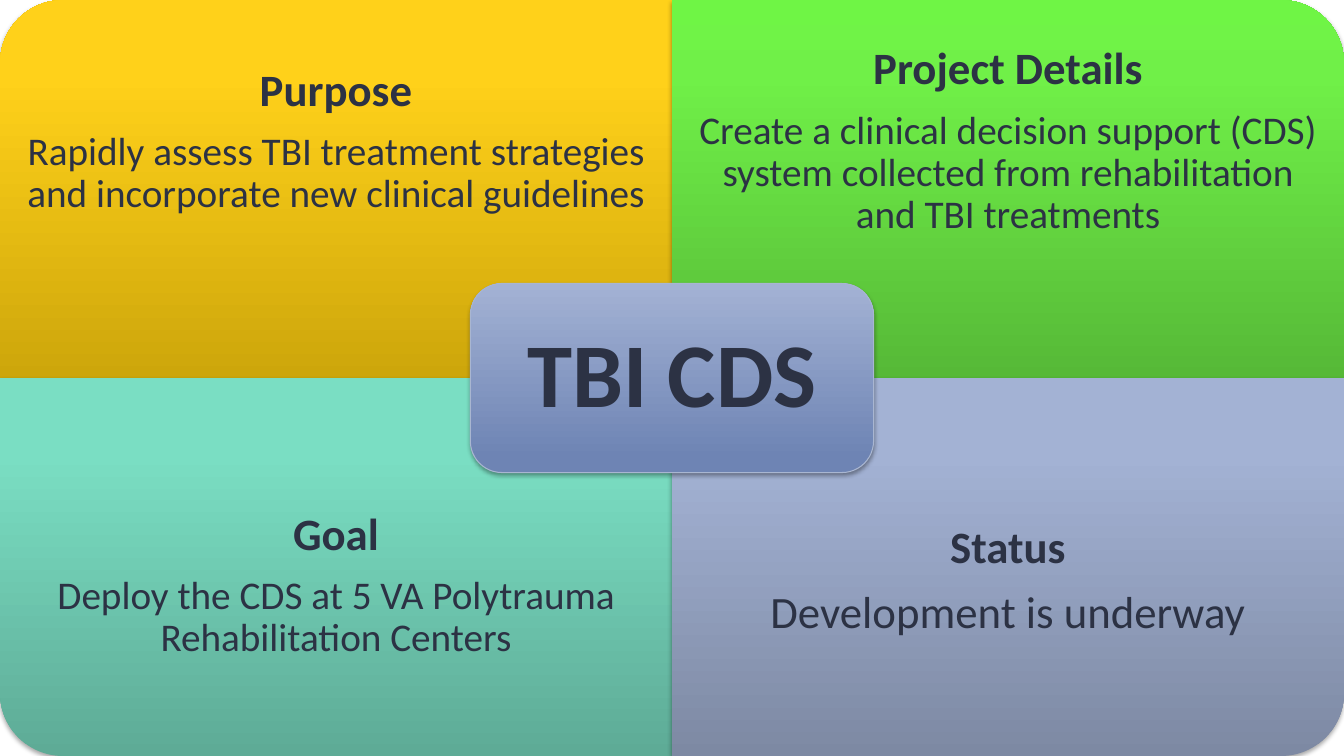
from dataclasses import dataclass

from lxml.etree import SubElement
from pptx import Presentation
from pptx.dml.color import RGBColor
from pptx.enum.shapes import MSO_SHAPE as Preset
from pptx.enum.text import MSO_ANCHOR as Anchor, PP_ALIGN as Align
from pptx.oxml import parse_xml
from pptx.oxml.ns import nsdecls, qn
from pptx.shapes.autoshape import Shape
from pptx.slide import Slide
from pptx.text.text import TextFrame
from pptx.util import Inches, Pt

Stops = tuple[tuple[int, str], ...]
WIDTH, HEIGHT = Inches(13.333), Inches(7.5)


@dataclass(frozen=True)
class Theme:
    font: str = "Calibri"
    ink: RGBColor = RGBColor.from_string("2C3244")
    hub_edge: RGBColor = RGBColor.from_string("A9B6D1")
    hub_fill: Stops = ((8, "6E84B4"), (100, "A3B2D4"))
    hub_size: int = 65
    heading_size: int = 32
    body_size: int = 28
    quadrant_inset: float = 0.25
    hub_inset: float = 0.27


THEME = Theme()


@dataclass(frozen=True)
class Area:
    """A rectangle in shares of the slide's width and height."""
    left: float
    top: float
    width: float
    height: float

    def box(self) -> tuple[int, int, int, int]:
        return (int(self.left * WIDTH), int(self.top * HEIGHT),
                int(self.width * WIDTH), int(self.height * HEIGHT))


@dataclass(frozen=True)
class Quadrant:
    column: int
    row: int
    rotation: int
    colours: tuple[str, str, str]
    heading: str
    body: str
    body_size: int = THEME.body_size
    lift: float = 0  # extra bottom inset, in inches


QUADRANTS = (
    Quadrant(0, 0, 270, ("CDA60B", "FFD11A", "FFD11B"), "Purpose",
             "Rapidly assess TBI treatment strategies and incorporate new clinical guidelines"),
    Quadrant(1, 0, 0, ("56B937", "70F048", "6FF545"), "Project Details",
             "Create a clinical decision support (CDS) system collected from "
             "rehabilitation and TBI treatments"),
    Quadrant(0, 1, 180, ("5EAB96", "7ADEC3", "78E1C5"), "Goal",
             "Deploy the CDS at 5 VA Polytrauma Rehabilitation Centers", lift=0.56),
    Quadrant(1, 1, 90, ("7D89A3", "A3B2D4", "A3B3D6"), "Status",
             "Development is underway", THEME.heading_size, lift=0.65),
)
HUB = Area(0.35, 3 / 8, 0.3, 2 / 8)


def style_surface(shape: Shape, stops: Stops) -> None:
    """Give a bottom-to-top gradient that ignores rotation, and a soft shadow."""
    colours = "".join(
        f'<a:gs pos="{share * 1000}"><a:srgbClr val="{colour}"/></a:gs>'
        for share, colour in stops)
    properties = shape._element.spPr
    properties.find(qn("a:ln")).addprevious(parse_xml(
        f'<a:gradFill {nsdecls("a")} rotWithShape="0"><a:gsLst>{colours}</a:gsLst>'
        '<a:lin ang="16200000" scaled="0"/></a:gradFill>'))
    properties.append(parse_xml(
        f'<a:effectLst {nsdecls("a")}><a:outerShdw blurRad="{Pt(3.1)}" dist="{Pt(1.8)}" '
        'dir="5400000" rotWithShape="0"><a:srgbClr val="000000"><a:alpha val="35000"/>'
        '</a:srgbClr></a:outerShdw></a:effectLst>'))


def write(frame: TextFrame, lines: list[tuple[str, int, bool]],
          inset: float, lift: float = 0) -> None:
    """Write centred (text, size, bold) paragraphs."""
    frame.word_wrap = True
    frame.vertical_anchor = Anchor.MIDDLE
    frame.margin_left = frame.margin_right = frame.margin_top = Inches(inset)
    frame.margin_bottom = Inches(inset + lift)
    for index, (text, size, bold) in enumerate(lines):
        paragraph = frame.add_paragraph() if index else frame.paragraphs[0]
        paragraph.text = text
        paragraph.alignment = Align.CENTER
        paragraph.line_spacing = 0.9
        paragraph.space_before = Pt(0)
        after = SubElement(paragraph._p.get_or_add_pPr(), qn("a:spcAft"))
        SubElement(after, qn("a:spcPct")).set("val", "35000")
        font = paragraph.font
        font.name, font.size, font.bold = THEME.font, Pt(size), bold
        font.color.rgb = THEME.ink


def draw_quadrant(slide: Slide, quadrant: Quadrant) -> None:
    left, top, width, height = Area(quadrant.column / 2, quadrant.row / 2, 0.5, 0.5).box()
    if quadrant.rotation % 180:
        left, top = left + (width - height) // 2, top + (height - width) // 2
        width, height = height, width
    panel = slide.shapes.add_shape(Preset.ROUND_1_RECTANGLE, left, top, width, height)
    panel.rotation = quadrant.rotation
    panel.line.fill.background()
    style_surface(panel, tuple(zip((0, 80, 100), quadrant.colours)))

    words = slide.shapes.add_textbox(
        *Area(quadrant.column / 2, quadrant.row * 5 / 8, 0.5, 3 / 8).box())
    write(words.text_frame,
          [(quadrant.heading, THEME.heading_size, True),
           (quadrant.body, quadrant.body_size, False)],
          THEME.quadrant_inset, quadrant.lift)


def draw_hub(slide: Slide) -> None:
    hub = slide.shapes.add_shape(Preset.ROUNDED_RECTANGLE, *HUB.box())
    hub.line.color.rgb = THEME.hub_edge
    hub.line.width = Pt(0.75)
    style_surface(hub, THEME.hub_fill)

    title = slide.shapes.title
    title.left, title.top, title.width, title.height = HUB.box()
    write(title.text_frame, [("TBI CDS", THEME.hub_size, True)], THEME.hub_inset)
    hub._element.addnext(title._element)


def main() -> None:
    deck = Presentation()
    deck.slide_width, deck.slide_height = WIDTH, HEIGHT
    slide = deck.slides.add_slide(deck.slide_layouts.get_by_name("Title Only"))
    for quadrant in QUADRANTS:
        draw_quadrant(slide, quadrant)
    draw_hub(slide)
    deck.save("out.pptx")


if __name__ == "__main__":
    main()
